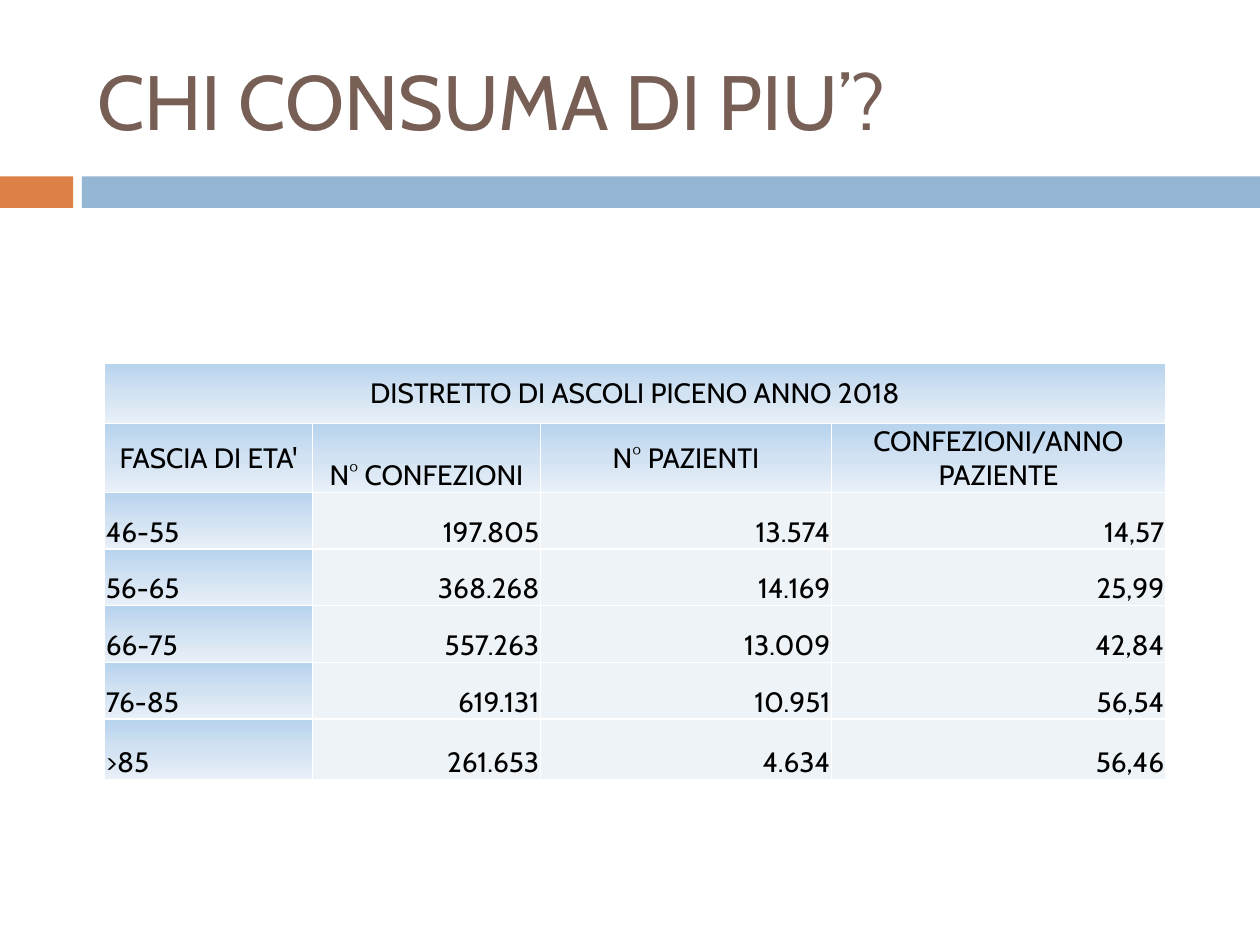
from lxml import etree
from pptx import Presentation
from pptx.dml.color import RGBColor
from pptx.enum.shapes import MSO_SHAPE
from pptx.enum.text import MSO_ANCHOR, PP_ALIGN
from pptx.oxml.ns import qn
from pptx.util import Inches, Pt

RECT = MSO_SHAPE.RECTANGLE
MIDDLE, BOTTOM = MSO_ANCHOR.MIDDLE, MSO_ANCHOR.BOTTOM
LEFT, CENTER, RIGHT = PP_ALIGN.LEFT, PP_ALIGN.CENTER, PP_ALIGN.RIGHT

ORANGE = RGBColor(0xDD, 0x80, 0x47)
BLUE = RGBColor(0x94, 0xB6, 0xD2)
BROWN = RGBColor(0x77, 0x5F, 0x55)
BLACK = RGBColor(0x00, 0x00, 0x00)
WHITE = RGBColor(0xFF, 0xFF, 0xFF)
PALE = RGBColor(0xEE, 0xF3, 0xF7)
SHADES = [
    (0, RGBColor(0xB7, 0xD3, 0xED)),
    (50, RGBColor(0xD2, 0xE2, 0xF2)),
    (100, RGBColor(0xE8, 0xF0, 0xF8)),
]

FONT = "Cabin"
TITLE = "CHI CONSUMA DI PIU’?"
ROWS = [
    ["DISTRETTO DI ASCOLI PICENO ANNO 2018", "", "", ""],
    ["FASCIA DI ETA'", "N° CONFEZIONI", "N° PAZIENTI", "CONFEZIONI/ANNO PAZIENTE"],
    ["46-55", "197.805", "13.574", "14,57"],
    ["56-65", "368.268", "14.169", "25,99"],
    ["66-75", "557.263", "13.009", "42,84"],
    ["76-85", "619.131", "10.951", "56,54"],
    [">85", "261.653", "4.634", "56,46"],
]
# Shares of the slide's width and height, in percent
COLS = [16.5, 18.1, 23.1, 26.5]
HEIGHTS = [6.4, 6, 6, 6, 6, 6, 6.4]


def add_color(parent, color):
    etree.SubElement(parent, qn("a:srgbClr"), val=str(color))


def add_borders(cell):
    props = cell._tc.get_or_add_tcPr()
    for side in ("L", "R", "T", "B"):
        line = etree.SubElement(props, qn(f"a:ln{side}"), w=str(Pt(1)))
        add_color(etree.SubElement(line, qn("a:solidFill")), WHITE)


def add_shades(cell):
    """Fill a cell from top to bottom with the three header shades."""
    fill = etree.SubElement(cell._tc.get_or_add_tcPr(), qn("a:gradFill"))
    stops = etree.SubElement(fill, qn("a:gsLst"))
    for share, color in SHADES:
        stop = etree.SubElement(stops, qn("a:gs"), pos=str(share * 1000))
        add_color(stop, color)
    etree.SubElement(fill, qn("a:lin"), ang="5400000", scaled="0")


class Deck:
    """Holds the style and the current slide; places are in percent."""

    def __init__(self):
        self.show = Presentation()
        self.show.slide_width, self.show.slide_height = Inches(10), Inches(7.5)
        self.slide = self.show.slides.add_slide(self.show.slide_layouts[5])

    def wide(self, share):
        return round(self.show.slide_width * share / 100)

    def high(self, share):
        return round(self.show.slide_height * share / 100)

    def box(self, x, y, w, h):
        return self.wide(x), self.high(y), self.wide(w), self.high(h)

    def style(self, frame, size, color, align):
        for par in frame.paragraphs:
            par.alignment = align
            for run in par.runs:
                run.font.name, run.font.size = FONT, Pt(size)
                run.font.color.rgb = color

    def title(self, text, *place):
        shape = self.slide.shapes.title
        shape.left, shape.top, shape.width, shape.height = self.box(*place)
        frame = shape.text_frame
        frame.text = text
        frame.vertical_anchor = MIDDLE
        self.style(frame, 44, BROWN, LEFT)

    def bar(self, color, *place):
        shape = self.slide.shapes.add_shape(RECT, *self.box(*place))
        shape.shadow.inherit = False
        shape.fill.solid()
        shape.fill.fore_color.rgb = color
        shape.line.fill.background()

    def cell(self, cell, text, head, anchor, align):
        cell.text_frame.text = text
        cell.vertical_anchor = anchor
        cell.margin_left = cell.margin_right = cell.margin_top = Inches(0.01)
        cell.margin_bottom = 0
        self.style(cell.text_frame, 16, BLACK, align)
        add_borders(cell)
        if head:
            add_shades(cell)
        else:
            cell.fill.solid()
            cell.fill.fore_color.rgb = PALE

    def table(self, rows, x, y):
        place = self.box(x, y, sum(COLS), sum(HEIGHTS))
        table = self.slide.shapes.add_table(len(rows), len(COLS), *place).table
        table.first_row = table.horz_banding = False
        for col, share in zip(table.columns, COLS):
            col.width = self.wide(share)
        for row, share in zip(table.rows, HEIGHTS):
            row.height = self.high(share)
        for r, row in enumerate(rows):
            for c, text in enumerate(row):
                top = r < 2
                anchor = MIDDLE if top and c % 2 == 0 else BOTTOM
                align = CENTER if top else RIGHT if c else LEFT
                self.cell(table.cell(r, c), text, top or c == 0, anchor, align)
        table.cell(0, 0).merge(table.cell(0, len(COLS) - 1))


def main():
    deck = Deck()
    deck.bar(ORANGE, 0, 18.67, 5.8, 3.33)
    deck.bar(BLUE, 6.5, 18.67, 93.5, 3.33)
    deck.title(TITLE, 6.7, 3.33, 89.2, 14.4)
    deck.table(ROWS, 8.3, 38.4)
    deck.show.save("out.pptx")


if __name__ == "__main__":
    main()
